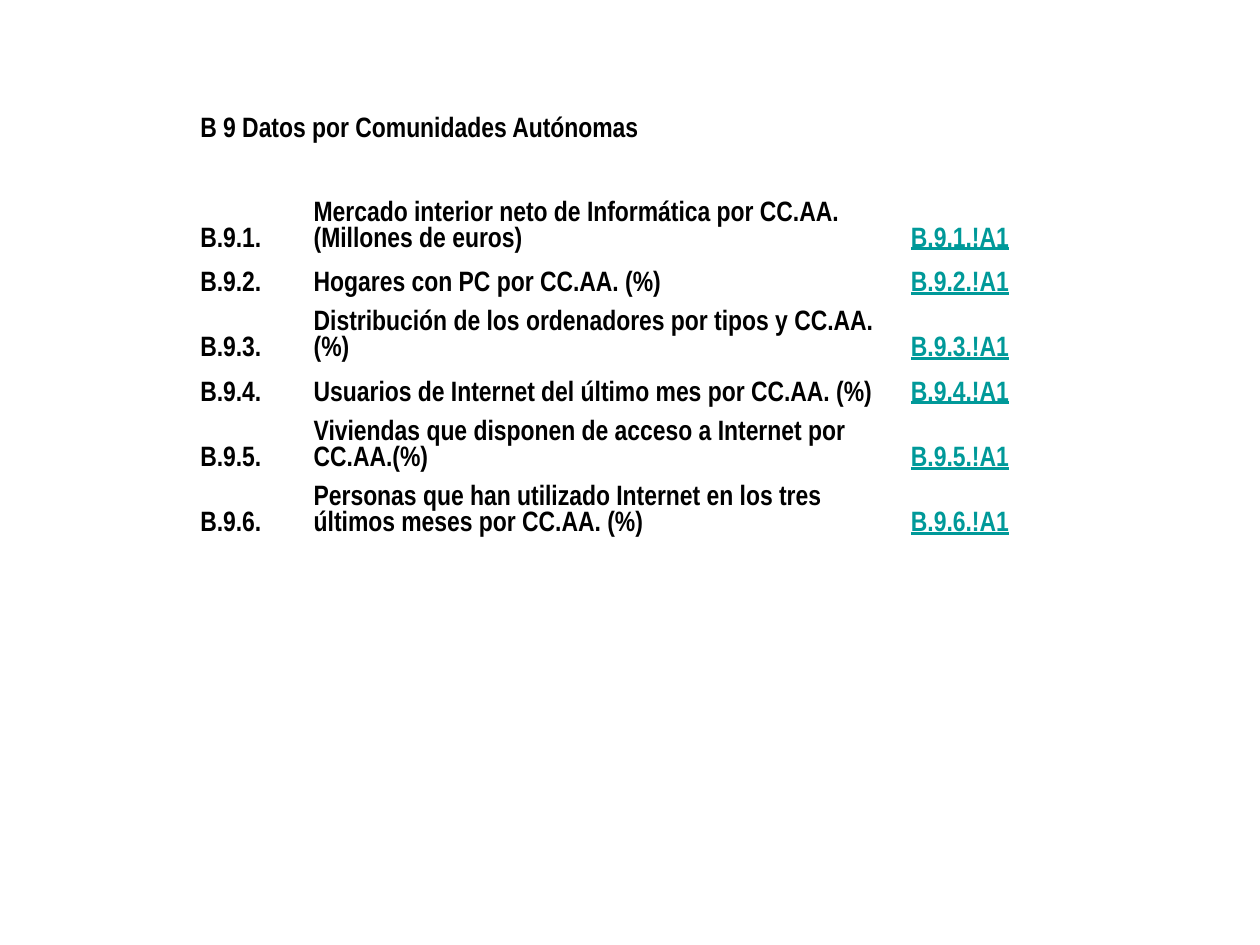
import pptx
import pptx.dml.color
import pptx.enum.text
import pptx.util

Inches = pptx.util.Inches
BLACK = pptx.dml.color.RGBColor(0x00, 0x00, 0x00)
TEAL = pptx.dml.color.RGBColor(0x00, 0x99, 0x99)
HEADING = "B 9 Datos por Comunidades Autónomas"
ONE_LINE, TWO_LINES = 0.35, 0.52
COLUMN_WIDTHS = (0.27, 0.9, 4.74, 1.41)
ENTRIES = (
    ("Mercado interior neto de Informática por CC.AA. (Millones de euros)", TWO_LINES),
    ("Hogares con PC por CC.AA. (%)", ONE_LINE),
    ("Distribución de los ordenadores por tipos y CC.AA. (%)", TWO_LINES),
    ("Usuarios de Internet del último mes por CC.AA. (%)", ONE_LINE),
    ("Viviendas que disponen de acceso a Internet por CC.AA.(%)", TWO_LINES),
    ("Personas que han utilizado Internet en los tres últimos meses por CC.AA. (%)", TWO_LINES),
)


def write_cell(cell, text, color=BLACK, underline=False):
    """Write one bold run at the bottom of a table cell."""
    cell.vertical_anchor = pptx.enum.text.MSO_ANCHOR.BOTTOM
    cell.margin_top = cell.margin_bottom = Inches(0.05)
    r = cell.text_frame.paragraphs[0].add_run()
    r.text = text
    r.font.name = "Arial Narrow"
    r.font.size = pptx.util.Pt(16)
    r.font.bold = True
    r.font.underline = underline
    r.font.color.rgb = color


def add_index_table(s, left, top, width):
    """Add the index of tables, with its heading, in the given box."""
    heights = [ONE_LINE, ONE_LINE] + [height for _, height in ENTRIES]
    table = s.shapes.add_table(
        len(heights), len(COLUMN_WIDTHS), left, top, width, Inches(sum(heights))
    ).table
    table.first_row = table.horz_banding = False
    for column, share in zip(table.columns, COLUMN_WIDTHS):
        column.width = int(width * share / sum(COLUMN_WIDTHS))
    for row, height in zip(table.rows, heights):
        row.height = Inches(height)
    for cell in table.iter_cells():
        cell.fill.background()
        cell.margin_top = cell.margin_bottom = 0

    table.cell(0, 1).merge(table.cell(0, 2))
    write_cell(table.cell(0, 1), HEADING)
    for number, (title, _) in enumerate(ENTRIES, start=1):
        row = number + 1
        code = f"B.9.{number}."
        write_cell(table.cell(row, 1), code)
        write_cell(table.cell(row, 2), title)
        write_cell(table.cell(row, 3), f"{code}!A1", TEAL, True)


def main():
    """Build and save the index slide."""
    prs = pptx.Presentation()
    prs.slide_width, prs.slide_height = Inches(10), Inches(7.5)
    s = prs.slides.add_slide(prs.slide_layouts[6])
    add_index_table(s, Inches(1.22), Inches(0.84), Inches(7.32))
    prs.save("out.pptx")


if __name__ == "__main__":
    main()
